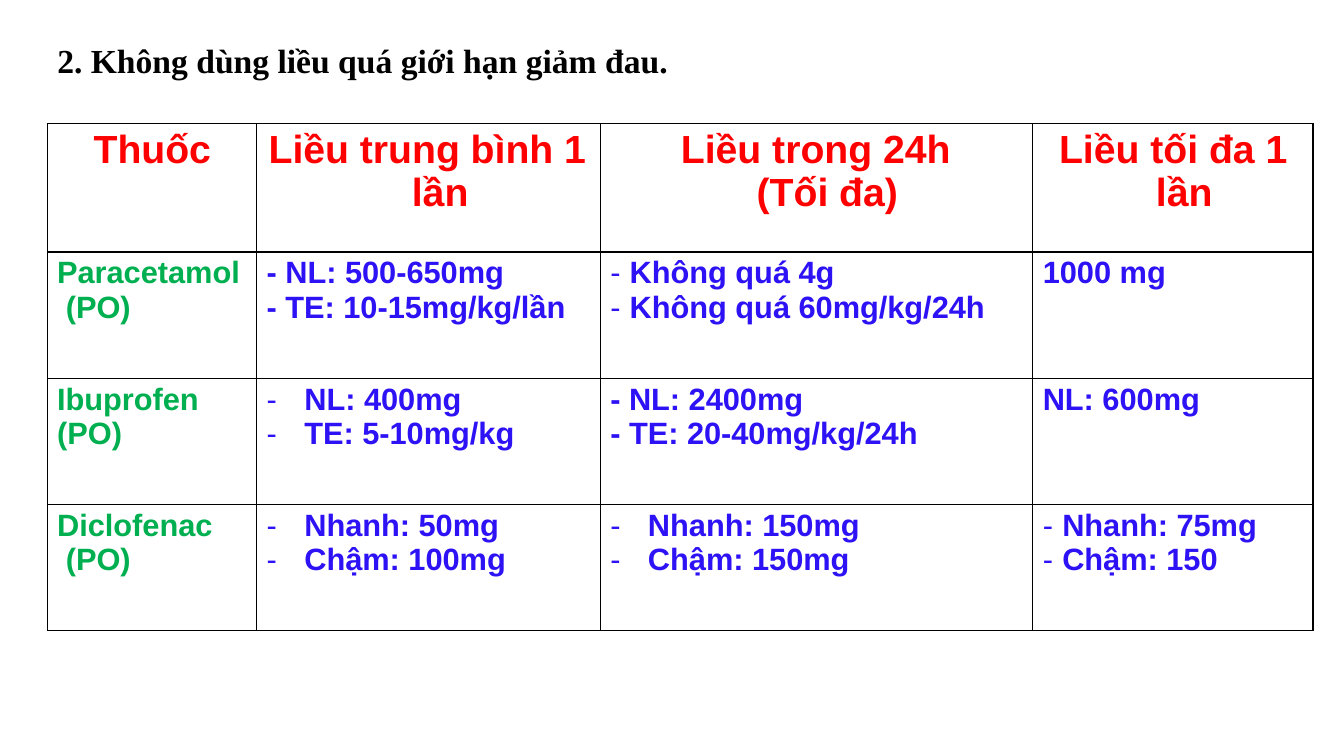
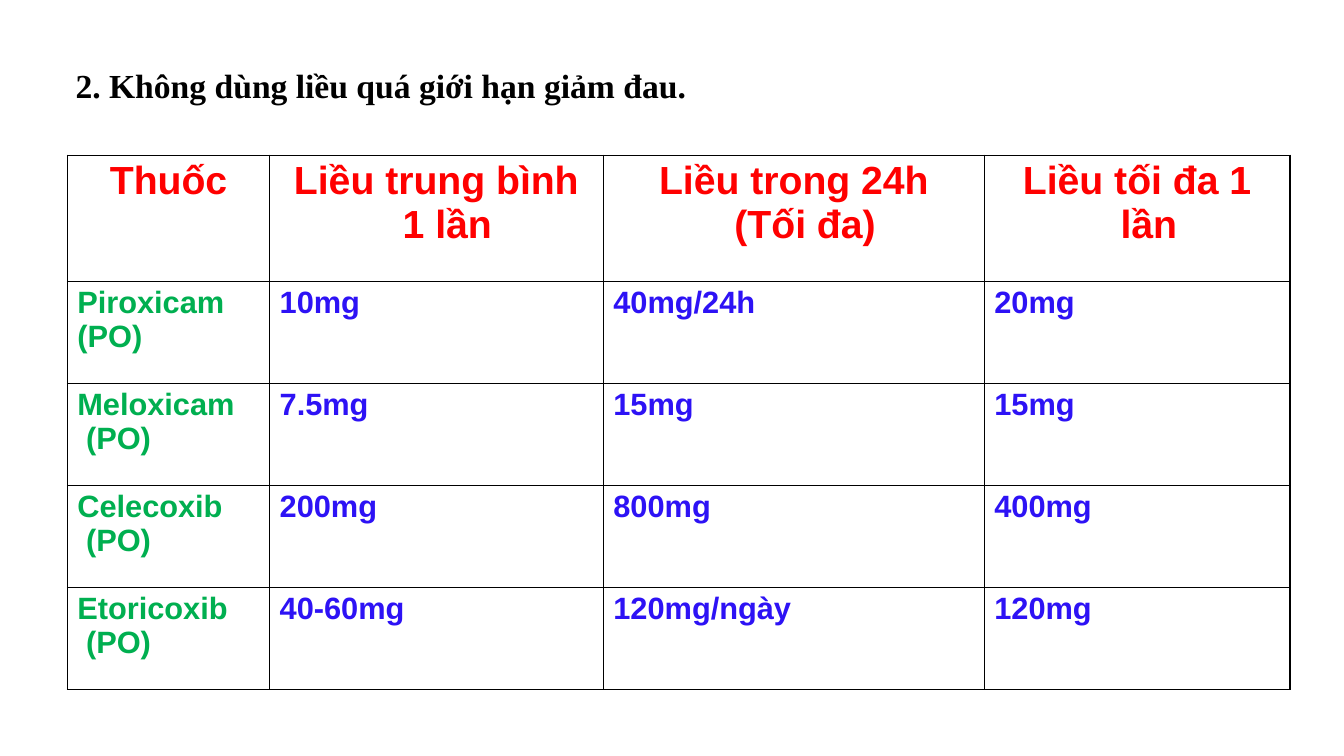
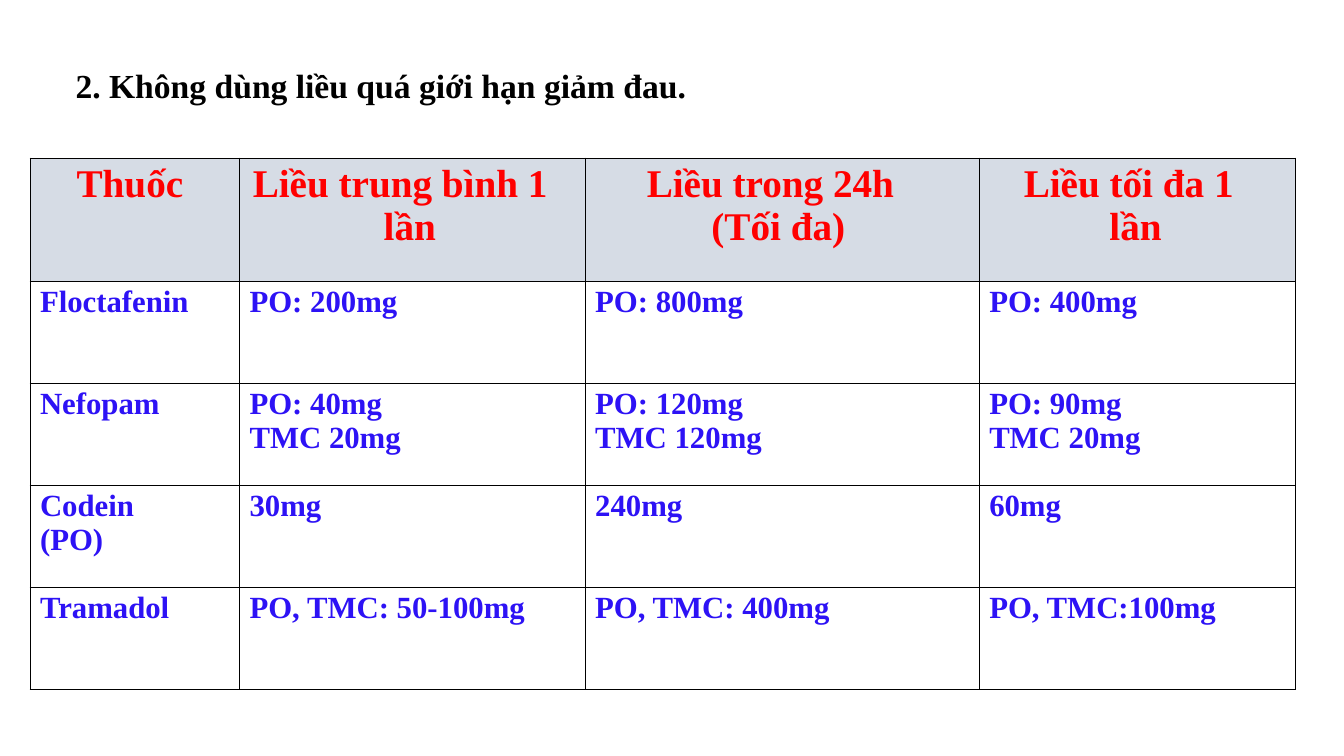
from dataclasses import dataclass

from lxml import etree
from pptx import Presentation
from pptx.dml.color import RGBColor
from pptx.enum.text import MSO_ANCHOR, PP_ALIGN
from pptx.oxml import parse_xml
from pptx.oxml.ns import qn
from pptx.util import Cm, Pt

TOP = MSO_ANCHOR.TOP
LEFT = PP_ALIGN.LEFT

BLACK = RGBColor(0x00, 0x00, 0x00)
RED = RGBColor(0xFF, 0x00, 0x00)
GREEN = RGBColor(0x00, 0xAF, 0x50)
BLUE = RGBColor(0x2D, 0x12, 0xF5)
GREY = RGBColor(0xD6, 0xDC, 0xE5)

SANS = "Arial"
SERIF = "Times New Roman"
DRAWING_NS = "http://schemas.openxmlformats.org/drawingml/2006/main"
TITLE_ONLY = 5

TITLE = "2. Không dùng liều quá giới hạn giảm đau."
AVERAGE_DOSE = "Liều trung bình 1\vlần"
PADDING = 0.25


@dataclass
class Entry:
    text: str
    first: float = PADDING
    rest: float = PADDING
    dashed: bool = False


@dataclass
class DoseTable:
    left: float
    top: float
    widths: list
    header_height: float
    row_height: float
    headings: list
    rows: list
    font: str = SANS
    drug_color: RGBColor = GREEN
    header_fill: RGBColor = None


def tucked(text):
    return Entry(text, rest=0.47)


def narrow_dashes(text):
    return Entry(text, rest=0.74, dashed=True)


def wide_dashes(text):
    return Entry(text, rest=1.2, dashed=True)


def headings(offsets, average_dose=AVERAGE_DOSE):
    labels = ["Thuốc", average_dose, "Liều trong 24h\v(Tối đa)", "Liều tối đa 1\vlần"]
    return [Entry(label, *offset) for label, offset in zip(labels, offsets)]


def style_font(paragraph, name, size, color):
    font = paragraph.font
    font.name = name
    font.size = Pt(size)
    font.bold = True
    font.color.rgb = color


def add_title(slide, left, top):
    title = slide.shapes.title
    title.left, title.top = Cm(left), Cm(top)
    title.width, title.height = Cm(21.69), Cm(1.27)
    frame = title.text_frame
    frame.text = TITLE
    frame.word_wrap = True
    frame.vertical_anchor = TOP
    paragraph = frame.paragraphs[0]
    paragraph.alignment = LEFT
    style_font(paragraph, SERIF, 24, BLACK)


def add_dash(properties, color):
    bullet_color = etree.SubElement(properties, qn("a:buClr"))
    etree.SubElement(bullet_color, qn("a:srgbClr"), val=str(color))
    etree.SubElement(properties, qn("a:buFont"), typeface=SANS)
    etree.SubElement(properties, qn("a:buChar"), char="-")


def add_borders(cell):
    properties = cell._tc.get_or_add_tcPr()
    for position, side in enumerate("LRTB"):
        properties.insert(position, parse_xml(
            f'<a:ln{side} xmlns:a="{DRAWING_NS}" w="{Pt(1)}">'
            f'<a:solidFill><a:srgbClr val="{BLACK}"/></a:solidFill></a:ln{side}>'))


def fill_cell(cell, entry, font_name, size, color, fill=None):
    if isinstance(entry, str):
        entry = Entry(entry)
    cell.margin_left = cell.margin_right = cell.margin_bottom = 0
    cell.margin_top = Cm(0.1)
    cell.vertical_anchor = TOP
    if fill is None:
        cell.fill.background()
    else:
        cell.fill.solid()
        cell.fill.fore_color.rgb = fill
    add_borders(cell)
    cell.text_frame.text = entry.text
    for index, paragraph in enumerate(cell.text_frame.paragraphs):
        paragraph.alignment = LEFT
        paragraph.space_before = Pt(0 if index else 3)
        properties = paragraph._p.get_or_add_pPr()
        properties.set("marL", str(Cm(entry.rest)))
        properties.set("indent", str(Cm(entry.first) - Cm(entry.rest)))
        if entry.dashed:
            add_dash(properties, color)
        style_font(paragraph, font_name, size, color)


def add_dose_table(slide, spec):
    heights = [spec.header_height] + [spec.row_height] * len(spec.rows)
    table = slide.shapes.add_table(
        len(heights), len(spec.widths), Cm(spec.left), Cm(spec.top),
        Cm(sum(spec.widths)), Cm(sum(heights))).table
    table.first_row = table.horz_banding = False
    for column, width in zip(table.columns, spec.widths):
        column.width = Cm(width)
    for row, height in zip(table.rows, heights):
        row.height = Cm(height)
    for column, heading in enumerate(spec.headings):
        fill_cell(table.cell(0, column), heading, spec.font, 28, RED, spec.header_fill)
    for row, entries in enumerate(spec.rows, start=1):
        for column, entry in enumerate(entries):
            color = BLUE if column else spec.drug_color
            fill_cell(table.cell(row, column), entry, spec.font, 22, color)


COMMON_DRUGS = DoseTable(
    left=1.19, top=3.12, widths=[5.28, 8.66, 10.9, 7.06],
    header_height=3.23, row_height=3.18,
    headings=headings([(1.17, 1.17), (0.3, 3.91), (2.03, 3.94), (0.66, 3.1)]),
    rows=[
        [tucked("Paracetamol\v(PO)"),
         "- NL: 500-650mg\n- TE: 10-15mg/kg/lần",
         narrow_dashes("Không quá 4g\nKhông quá 60mg/kg/24h"),
         "1000 mg"],
        ["Ibuprofen\n(PO)",
         wide_dashes("NL: 400mg\nTE: 5-10mg/kg"),
         "- NL: 2400mg\n- TE: 20-40mg/kg/24h",
         "NL: 600mg"],
        [tucked("Diclofenac\v(PO)"),
         wide_dashes("Nhanh: 50mg\nChậm: 100mg"),
         wide_dashes("Nhanh: 150mg\nChậm: 150mg"),
         narrow_dashes("Nhanh: 75mg\nChậm: 150")],
    ])

COXIBS_AND_OXICAMS = DoseTable(
    left=1.7, top=3.91, widths=[5.1, 8.41, 9.6, 7.7],
    header_height=3.18, row_height=2.57,
    headings=headings([(1.07, 1.07), (0.61, 3.35), (1.4, 3.3), (0.97, 3.43)],
                      "Liều trung bình\v1 lần"),
    rows=[
        ["Piroxicam\n(PO)", "10mg", "40mg/24h", "20mg"],
        [tucked("Meloxicam\v(PO)"), "7.5mg", "15mg", "15mg"],
        [tucked("Celecoxib\v(PO)"), "200mg", "800mg", "400mg"],
        [tucked("Etoricoxib\v(PO)"), "40-60mg", "120mg/ngày", "120mg"],
    ])

OTHER_ANALGESICS = DoseTable(
    left=0.76, top=3.99, widths=[5.28, 8.71, 9.93, 7.97],
    header_height=3.1, row_height=2.57,
    headings=headings([(1.17, 1.17), (0.33, 3.63), (1.55, 3.18), (1.12, 3.28)]),
    rows=[
        ["Floctafenin", "PO: 200mg", "PO: 800mg", "PO: 400mg"],
        ["Nefopam", "PO: 40mg\vTMC 20mg", "PO: 120mg\vTMC 120mg", "PO: 90mg\vTMC 20mg"],
        ["Codein\v(PO)", "30mg", "240mg", "60mg"],
        ["Tramadol", "PO, TMC: 50-100mg", "PO, TMC: 400mg", "PO, TMC:100mg"],
    ],
    font=SERIF, drug_color=BLUE, header_fill=GREY)


def add_dose_slide(deck, title_left, title_top, spec):
    slide = deck.slides.add_slide(deck.slide_layouts[TITLE_ONLY])
    add_title(slide, title_left, title_top)
    add_dose_table(slide, spec)


def main():
    deck = Presentation()
    deck.slide_width, deck.slide_height = Cm(33.87), Cm(19.05)
    add_dose_slide(deck, 1.19, 0.89, COMMON_DRUGS)
    add_dose_slide(deck, 1.65, 1.52, COXIBS_AND_OXICAMS)
    add_dose_slide(deck, 1.65, 1.52, OTHER_ANALGESICS)
    deck.save("out.pptx")


if __name__ == "__main__":
    main()
